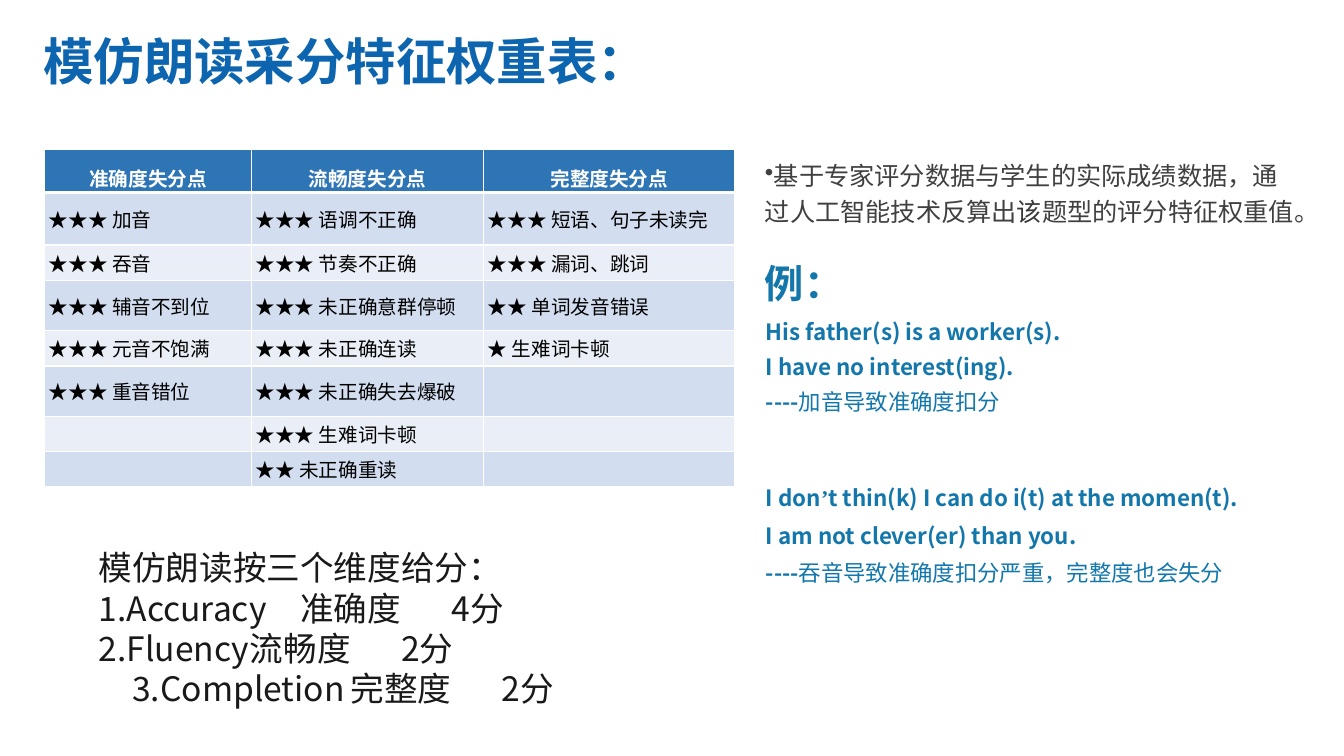
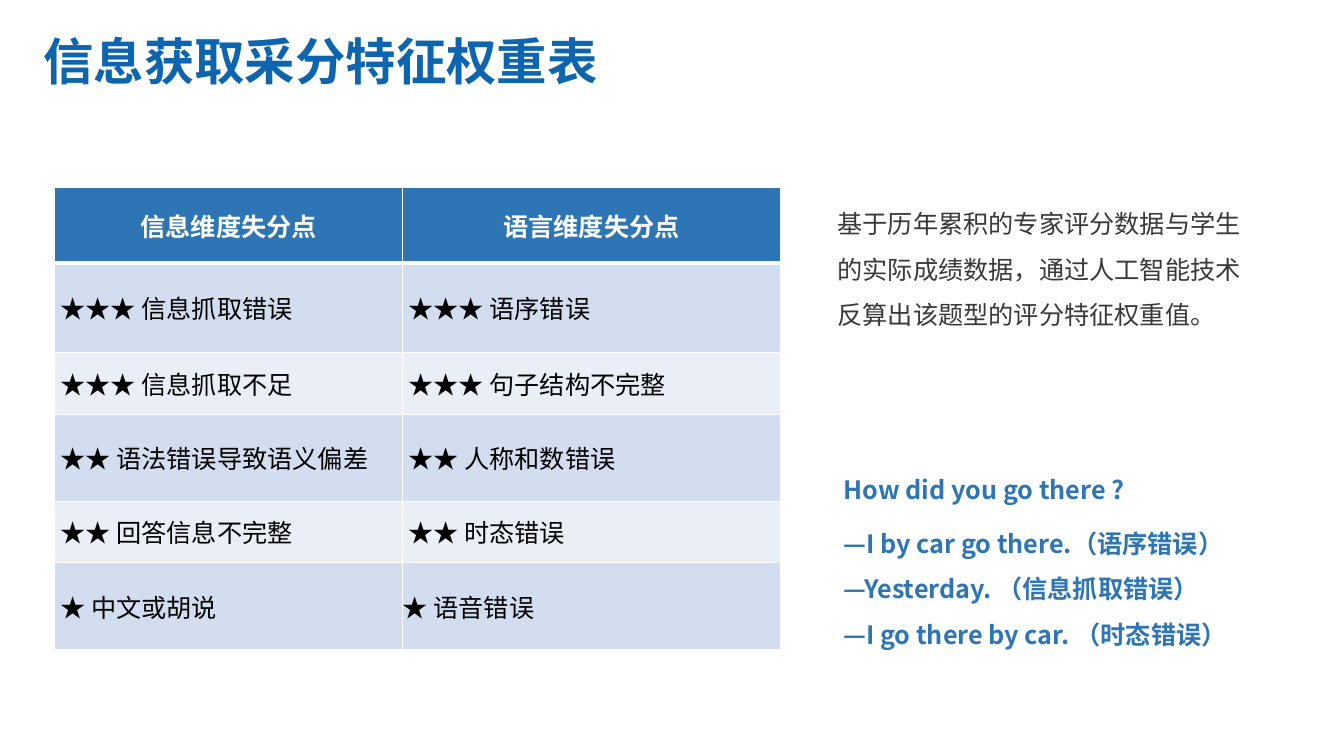
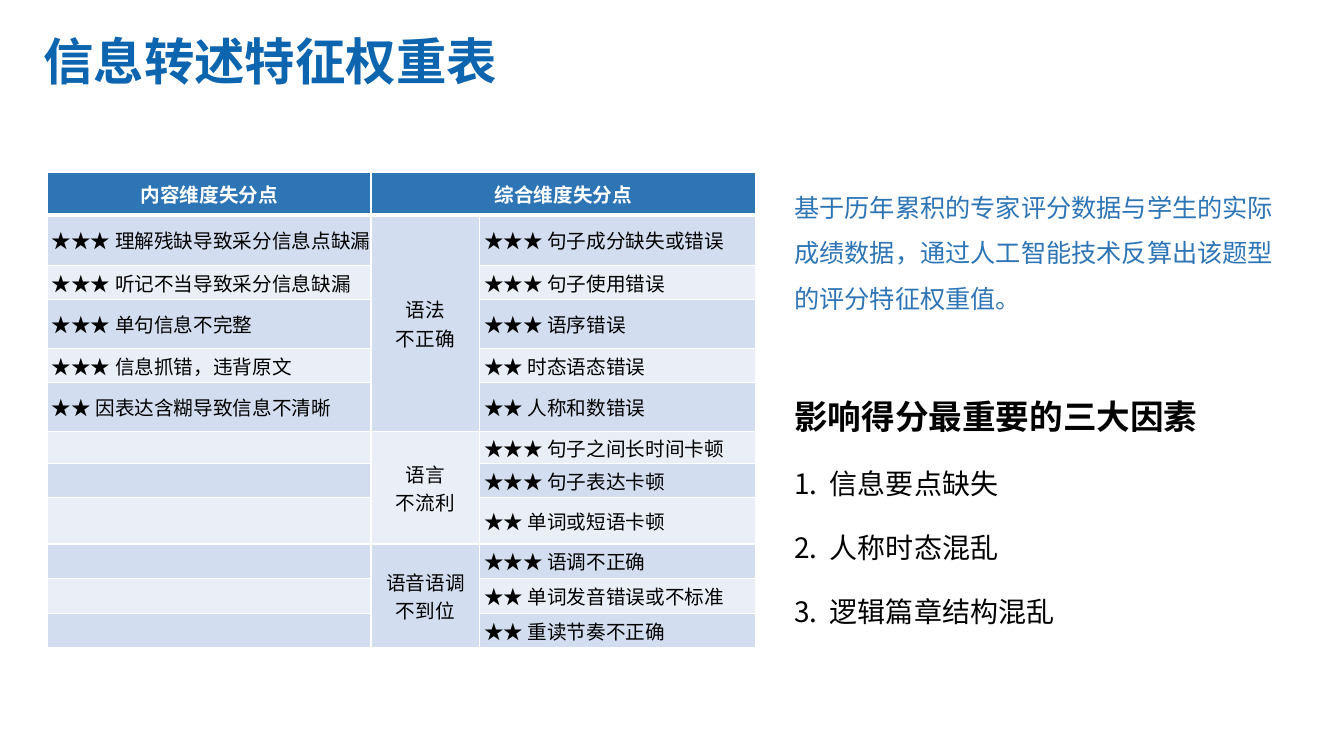
from lxml.etree import SubElement
from pptx import Presentation
from pptx.dml.color import RGBColor
from pptx.enum.text import MSO_ANCHOR, PP_ALIGN
from pptx.oxml.ns import qn
from pptx.util import Pt

FONT = "Noto Sans CJK SC"
COLORS = {
    "title": "0C65AE", "header": "2E75B6", "band_dark": "D2DEEF", "band_light": "EAEFF7",
    "white": "FFFFFF", "black": "000000", "example": "1377AB", "note": "404040",
    "note_dark": "3B3838", "ink": "191919",
}


def write(frame, paragraphs, color, spacing=None, align=PP_ALIGN.LEFT, **formats):
    """Fill a text frame; a paragraph is a string or a list of (text, format changes) runs."""
    for index, runs in enumerate(paragraphs):
        paragraph = frame.add_paragraph() if index else frame.paragraphs[0]
        paragraph.alignment = align
        if spacing:
            paragraph.line_spacing = spacing
        for text, changes in [(runs, {})] if isinstance(runs, str) else runs:
            run = paragraph.add_run()
            run.text = text
            values = {"name": FONT, "bold": False, **formats, **changes}
            run.font.color.rgb = RGBColor.from_string(COLORS[values.pop("color", color)])
            for attribute, value in values.items():
                setattr(run.font, attribute, value)
            SubElement(run.font._element, qn("a:ea"), typeface=values["name"])


def add_text(slide, left, top, width, height, paragraphs, color, **formats):
    frame = slide.shapes.add_textbox(Pt(left), Pt(top), Pt(width), Pt(height)).text_frame
    frame.word_wrap = True
    write(frame, paragraphs, color, **formats)
    return frame.paragraphs


prs = Presentation()
prs.slide_width, prs.slide_height = Pt(960), Pt(540)

# Each slide has a title and a table of scoring points
pages = [
    {
        "title": "模仿朗读采分特征权重表：",
        "at": (31.9, 106.6), "size": 14, "indent": 3, "header_spacing": 1.5, "spans": [],
        "columns": [147.8, 165.8, 179.6],
        "heights": [31, 37.4, 25.2, 36, 25.2, 36, 25.2, 25.2],
        "rows": [
            ["准确度失分点", "流畅度失分点", "完整度失分点"],
            ["★★★ 加音", "★★★ 语调不正确", "★★★ 短语、句子未读完"],
            ["★★★ 吞音", "★★★ 节奏不正确", "★★★ 漏词、跳词"],
            ["★★★ 辅音不到位", "★★★ 未正确意群停顿", "★★ 单词发音错误"],
            ["★★★ 元音不饱满", "★★★ 未正确连读", "★ 生难词卡顿"],
            ["★★★ 重音错位", "★★★ 未正确失去爆破", ""],
            ["", "★★★ 生难词卡顿", ""],
            ["", "★★ 未正确重读", ""],
        ],
    },
    {
        "title": "信息获取采分特征权重表",
        "at": (39.1, 134), "size": 18, "indent": 4, "header_spacing": None, "spans": [],
        "columns": [248.5, 270],
        "heights": [54, 64, 44, 62, 44, 62],
        "rows": [
            ["信息维度失分点", "语言维度失分点"],
            ["★★★ 信息抓取错误", "★★★ 语序错误"],
            ["★★★ 信息抓取不足", "★★★ 句子结构不完整"],
            ["★★ 语法错误导致语义偏差", "★★ 人称和数错误"],
            ["★★ 回答信息不完整", "★★ 时态错误"],
            ["★ 中文或胡说", "★ 语音错误"],
        ],
    },
    {
        "title": "信息转述特征权重表",
        "at": (34, 123.4), "size": 14, "indent": 3, "header_spacing": None,
        "spans": [(0, 1, 0, 2), (1, 1, 5, 1), (6, 1, 8, 1), (9, 1, 11, 1)],
        "columns": [231, 77.8, 197.3],
        "heights": [30.2, 36, 24.5, 34.8, 24.5, 34.8, 23, 24.5, 33, 24.8, 25, 24.5],
        "rows": [
            ["内容维度失分点", "综合维度失分点", ""],
            ["★★★ 理解残缺导致采分信息点缺漏", "语法\n不正确", "★★★ 句子成分缺失或错误"],
            ["★★★ 听记不当导致采分信息缺漏", "", "★★★ 句子使用错误"],
            ["★★★ 单句信息不完整", "", "★★★ 语序错误"],
            ["★★★ 信息抓错，违背原文", "", "★★ 时态语态错误"],
            ["★★ 因表达含糊导致信息不清晰", "", "★★ 人称和数错误"],
            ["", "语言\n不流利", "★★★ 句子之间长时间卡顿"],
            ["", "", "★★★ 句子表达卡顿"],
            ["", "", "★★ 单词或短语卡顿"],
            ["", "语音语调\n不到位", "★★★ 语调不正确"],
            ["", "", "★★ 单词发音错误或不标准"],
            ["", "", "★★ 重读节奏不正确"],
        ],
    },
]

slides, tables = [], []
for page in pages:
    slide = prs.slides.add_slide(prs.slide_layouts[6])
    slides.append(slide)
    add_text(slide, 23.8, 18, 654.5, 56.2, [page["title"]], "title", size=Pt(36), bold=True)

    rows, columns, heights = page["rows"], page["columns"], page["heights"]
    left, top = page["at"]
    table = slide.shapes.add_table(len(rows), len(columns), Pt(left), Pt(top),
                                   Pt(sum(columns)), Pt(sum(heights))).table
    tables.append(table)
    for column, width in zip(table.columns, columns):
        column.width = Pt(width)
    for row, height in zip(table.rows, heights):
        row.height = Pt(height)

    for r, row in enumerate(rows):
        for c, text in enumerate(row):
            cell = table.cell(r, c)
            header, point = r == 0, text.startswith("★")
            spread_header = header and page["header_spacing"]
            layout = {
                "margin_left": Pt(page["indent"] if point else 0),
                "margin_right": 0, "margin_top": 0, "margin_bottom": 0,
                "vertical_anchor": MSO_ANCHOR.TOP if spread_header else MSO_ANCHOR.MIDDLE,
            }
            for attribute, value in layout.items():
                setattr(cell, attribute, value)

            edges = {"lnL": 1, "lnR": 1, "lnT": 3 if r == 1 else 1, "lnB": 3 if header else 1}
            for edge, weight in edges.items():
                line = SubElement(cell._tc.get_or_add_tcPr(), qn(f"a:{edge}"), w=str(Pt(weight)))
                SubElement(SubElement(line, qn("a:solidFill")), qn("a:srgbClr"),
                           val=COLORS["white"])
            band = "header" if header else "band_dark" if r % 2 else "band_light"
            cell.fill.solid()
            cell.fill.fore_color.rgb = RGBColor.from_string(COLORS[band])

            if text:
                write(cell.text_frame, text.split("\n"), "white" if header else "black",
                      spacing=page["header_spacing"] if header else None,
                      align=PP_ALIGN.LEFT if point else PP_ALIGN.CENTER,
                      size=Pt(page["size"]), bold=header)
            else:  # keeps empty rows from growing
                SubElement(cell.text_frame.paragraphs[0]._p, qn("a:endParaRPr"),
                           sz=str(page["size"] * 100))

    for r1, c1, r2, c2 in page["spans"]:
        table.cell(r1, c1).merge(table.cell(r2, c2))

reading, retrieval, retelling = slides
tables[1].cell(5, 1).margin_left = 0

# Reading aloud
basis = add_text(reading, 539.3, 106.6, 392.4, 59.8, [[
    ("基于专家评分数据与学生的实际成绩数据，通过人工智能技术反算出", {}),
    ("该", {"color": "note_dark"}),
    ("题型的评分特征权重值。", {}),
]], "note", spacing=1.2, size=Pt(18))
basis_format = basis[0]._p.get_or_add_pPr()
basis_format.set("marL", "0")
basis_format.set("indent", "0")
SubElement(basis_format, qn("a:buChar"), char="•")

add_text(reading, 539.3, 181.4, 80, 41, ["例："], "example", size=Pt(28), bold=True)
add_text(reading, 540, 218, 329.8, 83, [
    "His father(s) is a worker(s).",
    "I have no interest(ing).",
    [("----", {}), ("加音导致准确度扣分", {"bold": False})],
], "example", spacing=1.3, size=Pt(16), bold=True)
add_text(reading, 540, 334.8, 392.4, 88.6, [
    [("I don", {}), ("’", {"name": "Times New Roman"}),
     ("t thin(k) I can do i(t) at the momen(t).", {})],
    "I am not clever(er) than you.",
    [("----", {}), ("吞音导致准确度扣分严重，完整度也会失分", {"bold": False})],
], "example", spacing=1.4, size=Pt(16), bold=True)

dimensions = add_text(reading, 63.4, 387.4, 483.8, 123.8, [
    "模仿朗读按三个维度给分：",
    "1.Accuracy\t准确度\t4分",
    "2.Fluency\t流畅度\t2分",
    "3.Completion\t完整度\t2分",
], "ink", size=Pt(24))
for dimension, indent, name_stop in zip(dimensions[1:], (0, 0, 24), (163.5, 161, 197)):
    dimension_format = dimension._p.get_or_add_pPr()
    dimension_format.set("marL", "0")
    dimension_format.set("indent", str(Pt(indent)))
    stops = SubElement(dimension_format, qn("a:tabLst"))
    for stop in (name_stop, name_stop + 88):
        SubElement(stops, qn("a:tab"), pos=str(Pt(stop)), algn="l")

# Retrieving information
basis_text = "基于历年累积的专家评分数据与学生的实际成绩数据，通过人工智能技术反算出该题型的评分特征权重值。"
add_text(retrieval, 591.1, 134.6, 315.4, 105, [basis_text], "note_dark",
         spacing=1.5, size=Pt(18))
add_text(retrieval, 595.4, 335.5, 254.9, 29, ["How did you go there ?"], "header",
         size=Pt(18), bold=True)
add_text(retrieval, 595.4, 362.9, 307.4, 101.5, [
    "—I by car go there.（语序错误）",
    "—Yesterday. （信息抓取错误）",
    "—I go there by car. （时态错误）",
], "header", spacing=1.5, size=Pt(18), bold=True)

# Retelling information
add_text(retelling, 560.2, 123.1, 367.9, 105, [basis_text], "header", spacing=1.5, size=Pt(18))
factors = add_text(retelling, 560.2, 253.4, 324.7, 193.7, [
    [("影响得分最重要的三大因素", {"size": Pt(24), "bold": True})],
    "信息要点缺失",
    "人称时态混乱",
    "逻辑篇章结构混乱",
], "black", spacing=1.9, size=Pt(20))
for factor in factors[1:]:
    factor_format = factor._p.get_or_add_pPr()
    factor_format.set("marL", str(Pt(25.5)))
    factor_format.set("indent", str(Pt(-25.5)))
    SubElement(factor_format, qn("a:buAutoNum"), type="arabicPeriod")

prs.save("out.pptx")
